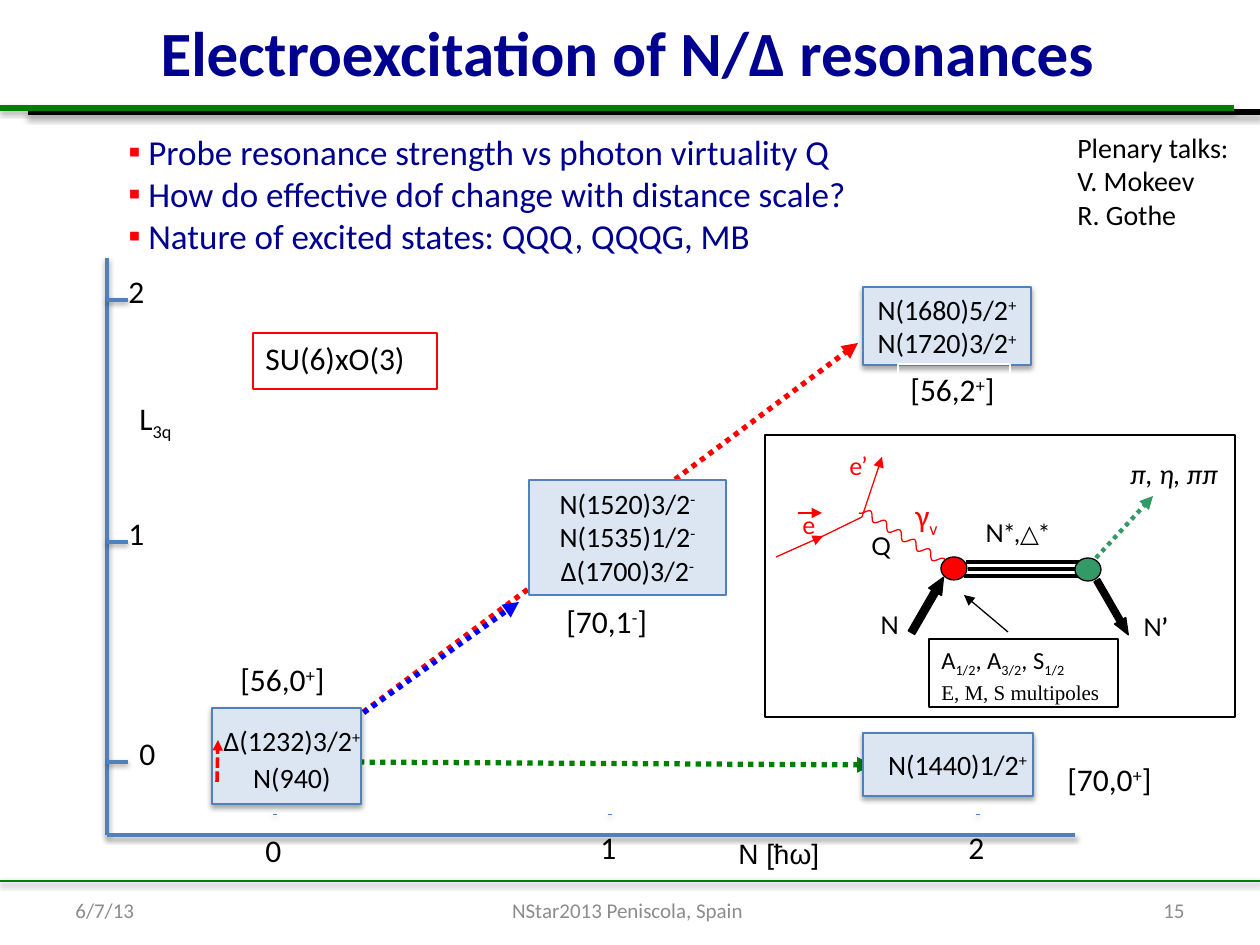
from math import cos, hypot, pi

from lxml.etree import SubElement
from pptx import Presentation
from pptx.dml.color import RGBColor
from pptx.enum.dml import MSO_LINE
from pptx.enum.shapes import MSO_CONNECTOR, MSO_SHAPE
from pptx.enum.text import MSO_ANCHOR, MSO_AUTO_SIZE, PP_ALIGN
from pptx.oxml.ns import qn
from pptx.util import Emu, Pt

EMU_PER_PX = 914400 / 126
COLORS = {
    "black": "000000", "white": "FFFFFF", "navy": "000090", "gray": "8C8C8C",
    "red": "FF0000", "blue": "0000FF", "green": "008000", "teal": "339966",
    "axis": "4F81BD", "pale": "DCE6F2",
}
LEFT, CENTER, RIGHT = PP_ALIGN.LEFT, PP_ALIGN.CENTER, PP_ALIGN.RIGHT
DOT, DASH = MSO_LINE.ROUND_DOT, MSO_LINE.SQUARE_DOT

# Text markup: "|" separates runs; a run starting with ^ is raised, _ lowered, * bold.
TITLE = "Electroexcitation of N/Δ resonances"
BULLETS = [
    "Probe resonance strength vs photon virtuality Q",
    "How do effective dof change with distance scale?",
    "Nature of excited states: QQQ, QQQG, MB",
]
SPEAKERS = ["Plenary talks:", "V. Mokeev", "R. Gothe"]
FOOTERS = [
    ("6/7/13", (63, 885, 294, 50), LEFT),
    ("NStar2013 Peniscola, Spain", (428, 885, 399, 50), CENTER),
    ("15", (903, 885, 294, 50), RIGHT),
]
RULES = [
    ((28, 112, 1260, 112), "black", 3, 2.6),
    ((0, 108, 1234, 108), "green", 3, 1.6),
    ((0, 881, 1260, 881), "green", 1.5, 1.6),
]
TRANSITIONS = [
    ((338, 731, 858, 343), "red"),
    ((338, 731, 519, 602), "blue"),
    ((338, 762, 873, 765), "green"),
]
# box, shadowed, text box, paragraphs, vertical anchor, space before later paragraphs
MULTIPLETS = [
    ((212, 708, 149, 96), True, (192, 721, 200, 76),
     ["Δ(1232)3/2|^+", "N(940)"], MSO_ANCHOR.MIDDLE, 2),
    ((863, 733, 170, 63), True, (867, 741, 181, 47),
     ["N(1440)1/2|^+"], MSO_ANCHOR.TOP, 0),
    ((529, 480, 197, 115), False, (529, 480, 197, 115),
     ["N(1520)3/2|^-", "N(1535)1/2|^-", "Δ(1700)3/2|^-"], MSO_ANCHOR.TOP, 0),
    ((863, 287, 168, 78), True, (853, 287, 188, 78),
     ["N(1680)5/2|^+", "N(1720)3/2|^+"], MSO_ANCHOR.MIDDLE, 0),
]
# label, box, outlined in white
MULTIPLET_LABELS = [
    ("[70,1|^-|]", (554, 596, 111, 50), False),
    ("[56,2|^+|]", (898, 364, 112, 50), True),
    ("[70,0|^+|]", (1055, 754, 112, 50), True),
    ("[56,0|^+|]", (228, 654, 112, 50), True),
]
ORIGIN_X, ORIGIN_Y = 107, 835
VERTICAL_TICKS = [("0", 762, 127), ("1", 542, 116), ("2", 300, 116)]
HORIZONTAL_TICKS = [("0", 275, 825), ("1", 610, 822), ("2", 978, 822)]
FRAME = (765, 435, 470, 282)
# endpoints, colour, width, dash, arrowhead
DIAGRAM_LINES = [
    ((862, 517, 882, 457), "red", 0.75, None, True),
    ((776, 557, 823, 536), "red", 0.75, None, True),
    ((819, 538, 862, 517), "red", 0.75, None, False),
    ((798, 513, 822, 513), "red", 0.75, None, True),
    ((966, 562, 1081, 562), "black", 2, None, False),
    ((968, 569, 1081, 569), "black", 2, None, False),
    ((964, 576, 1079, 576), "black", 2, None, False),
    ((1096, 558, 1153, 496), "teal", 2.5, DOT, True),
    ((1008, 632, 964, 595), "black", 0.75, None, True),
]
VERTICES = [((941, 557, 26, 23), "red"), ((1075, 558, 26, 23), "teal")]
NUCLEON_ARROWS = [((920, 573, 15, 64), 30, 1.12), ((1106, 576, 13, 63), 150, 1.25)]
DIAGRAM_LABELS = [
    ("e", (790, 504, 37, 72), "red", "Lato", 14),
    ("e’", (837, 445, 48, 42), "red", "Lato", 14),
    ("γ|_v", (903, 490, 62, 63), "red", "Calibri", 18),
    ("N", (868, 604, 37, 72), "black", "Lato", 14),
    ("N|*’", (1131, 606, 64, 42), "black", "Lato", 14),
    ("N*,△*", (973, 512, 123, 42), "black", "Lato", 14),
    ("Q", (859, 525, 45, 43), "black", "Lato", 14),
]
AMPLITUDES = ["A|_1/2|, A|_3/2|, S|_1/2"]
MULTIPOLES = ["E, M, S multipoles"]


def px(value):
    return Emu(round(value * EMU_PER_PX))


def color(name):
    return RGBColor.from_string(COLORS[name])


def add_shadow(shape, distance, alpha):
    """Cast a soft shadow straight down; a distance of 0 means no shadow."""
    effects = SubElement(shape._element.spPr, qn("a:effectLst"))
    if distance:
        shadow = SubElement(effects, qn("a:outerShdw"), blurRad=str(Pt(3.1)),
                            dist=str(Pt(distance)), dir="5400000", rotWithShape="0")
        black = SubElement(shadow, qn("a:srgbClr"), val=COLORS["black"])
        SubElement(black, qn("a:alpha"), val=str(alpha * 1000))


def add_line(slide, ends, line_color, width, dash=None, arrow=False, shadow=0):
    connector = slide.shapes.add_connector(MSO_CONNECTOR.STRAIGHT, *map(px, ends))
    connector.line.color.rgb = color(line_color)
    connector.line.width = Pt(width)
    if dash:
        connector.line.dash_style = dash
    if arrow:
        SubElement(connector.line._get_or_add_ln(), qn("a:tailEnd"), type="triangle")
    add_shadow(connector, shadow, 38)
    return connector


def add_shape(slide, box, fill=None, line="black", width=0.75, kind=MSO_SHAPE.RECTANGLE, shadow=0):
    shape = slide.shapes.add_shape(kind, *map(px, box))
    if fill:
        shape.fill.solid()
        shape.fill.fore_color.rgb = color(fill)
    else:
        shape.fill.background()
    shape.line.color.rgb = color(line)
    shape.line.width = Pt(width)
    if shadow:
        add_shadow(shape, shadow, 35)
    else:
        shape.shadow.inherit = False
    return shape


def write(slide, box, paragraphs, size=18, text_color="black", font="Calibri", bold=False,
          italic=False, align=LEFT, anchor=MSO_ANCHOR.TOP, wrap=True, bullet=None, gap=0):
    textbox = slide.shapes.add_textbox(*map(px, box))
    frame = textbox.text_frame
    frame.word_wrap = wrap
    frame.auto_size = MSO_AUTO_SIZE.NONE if wrap else MSO_AUTO_SIZE.SHAPE_TO_FIT_TEXT
    frame.vertical_anchor = anchor
    for index, markup in enumerate(paragraphs):
        paragraph = frame.add_paragraph() if index else frame.paragraphs[0]
        paragraph.alignment = align
        if index and gap:
            paragraph.space_before = Pt(gap)
        if bullet:
            properties = paragraph._p.get_or_add_pPr()
            properties.set("marL", str(px(20)))
            properties.set("indent", str(-px(20)))
            bullet_color = SubElement(properties, qn("a:buClr"))
            SubElement(bullet_color, qn("a:srgbClr"), val=COLORS["red"])
            SubElement(properties, qn("a:buFont"), typeface="Arial")
            SubElement(properties, qn("a:buChar"), char=bullet)
        for piece in markup.split("|"):
            mark = piece[0] if piece[0] in "^_*" else ""
            run = paragraph.add_run()
            run.text = piece[len(mark):]
            run.font.name, run.font.size = font, Pt(size)
            run.font.bold, run.font.italic = bold or mark == "*", italic
            run.font.color.rgb = color(text_color)
            if mark in ("^", "_"):
                run._r.get_or_add_rPr().set("baseline", "30000" if mark == "^" else "-25000")
    return textbox


def add_photon(slide, start=(859, 513), reach=(88, 57), waves=6, amplitude=4, steps=96):
    """Draw the virtual photon as a wave along the straight way from start."""
    length = hypot(*reach)
    points = []
    for step in range(steps + 1):
        part = step / steps
        offset = amplitude * (1 - cos(2 * pi * waves * part)) / length
        points.append((px(start[0] + reach[0] * part + reach[1] * offset),
                       px(start[1] + reach[1] * part - reach[0] * offset)))
    builder = slide.shapes.build_freeform(*points[0], scale=1.0)
    builder.add_line_segments(points[1:], close=False)
    wave = builder.convert_to_shape()
    wave.fill.background()
    wave.line.color.rgb = color("red")
    wave.line.width = Pt(0.75)
    wave.shadow.inherit = False


def add_level_chart(slide):
    for ends, line_color in TRANSITIONS:
        add_line(slide, ends, line_color, 3, DOT, arrow=True)
    for box, shadowed, text_box, states, anchor, gap in MULTIPLETS:
        add_shape(slide, box, "pale", "axis", 1.5, shadow=1.8 if shadowed else 0)
        write(slide, text_box, states, size=16, align=CENTER, anchor=anchor, gap=gap)
    axes = [(ORIGIN_X, ORIGIN_Y, ORIGIN_X, 258), (ORIGIN_X, ORIGIN_Y, 1075, ORIGIN_Y)]
    ticks = [(ORIGIN_X, y, 128, y) for _, y, _ in VERTICAL_TICKS]
    ticks += [(x, 814, x, 815) for _, x, _ in HORIZONTAL_TICKS]
    for ends in axes + ticks:
        add_line(slide, ends, "axis", 2, shadow=1.6)
    for label, y, left in VERTICAL_TICKS:
        write(slide, (left, y - 34, 44, 57), [label])
    for label, x, top in HORIZONTAL_TICKS:
        write(slide, (x - 22, top, 44, 57), [label])
    write(slide, (127, 393, 72, 57), ["L|_3q"])
    write(slide, (726, 830, 108, 48), ["N [ħω]"], size=16, font="Arial")
    add_line(slide, (217, 782, 218, 740), "red", 2, DASH, arrow=True)
    add_shape(slide, (253, 333, 184, 56), line="red")
    write(slide, (253, 333, 184, 56), ["SU(6)xO(3)"])
    for label, box, outlined in MULTIPLET_LABELS:
        textbox = write(slide, box, [label], wrap=False)
        if outlined:
            textbox.line.color.rgb = color("white")
            textbox.line.width = Pt(0.75)


def add_scattering_diagram(slide):
    add_photon(slide)
    for ends, *style in DIAGRAM_LINES:
        add_line(slide, ends, *style)
    for box, fill in VERTICES:
        add_shape(slide, box, fill, kind=MSO_SHAPE.OVAL)
    for box, angle, head in NUCLEON_ARROWS:
        arrow = add_shape(slide, box, "black", kind=MSO_SHAPE.UP_ARROW)
        arrow.rotation = angle
        arrow.adjustments[0], arrow.adjustments[1] = 0.5, head
    for label, box, text_color, font, size in DIAGRAM_LABELS:
        write(slide, box, [label], size=size, text_color=text_color, font=font)
    write(slide, (1118, 450, 118, 47), ["π, η, ππ"], size=16, italic=True)
    add_shape(slide, (929, 639, 189, 68), "white")
    write(slide, (929, 639, 189, 40), AMPLITUDES, size=14)
    write(slide, (929, 673, 189, 34), MULTIPOLES, size=12, font="Times New Roman")


def main():
    presentation = Presentation()
    presentation.slide_width, presentation.slide_height = px(1260), px(945)
    slide = presentation.slides.add_slide(presentation.slide_layouts[6])
    for ends, line_color, width, distance in RULES:
        add_line(slide, ends, line_color, width, shadow=distance)
    add_shape(slide, FRAME, "white")
    write(slide, (24, 0, 1207, 102), [TITLE], size=36, text_color="navy", bold=True,
          align=CENTER, anchor=MSO_ANCHOR.MIDDLE)
    add_level_chart(slide)
    write(slide, (116, 124, 755, 140), BULLETS, size=20, text_color="navy",
          wrap=False, bullet="▪")
    add_scattering_diagram(slide)
    for text, box, align in FOOTERS:
        write(slide, box, [text], size=12, text_color="gray", align=align,
              anchor=MSO_ANCHOR.MIDDLE)
    write(slide, (1065, 124, 179, 115), SPEAKERS, size=16, wrap=False)
    presentation.save("out.pptx")


if __name__ == "__main__":
    main()
